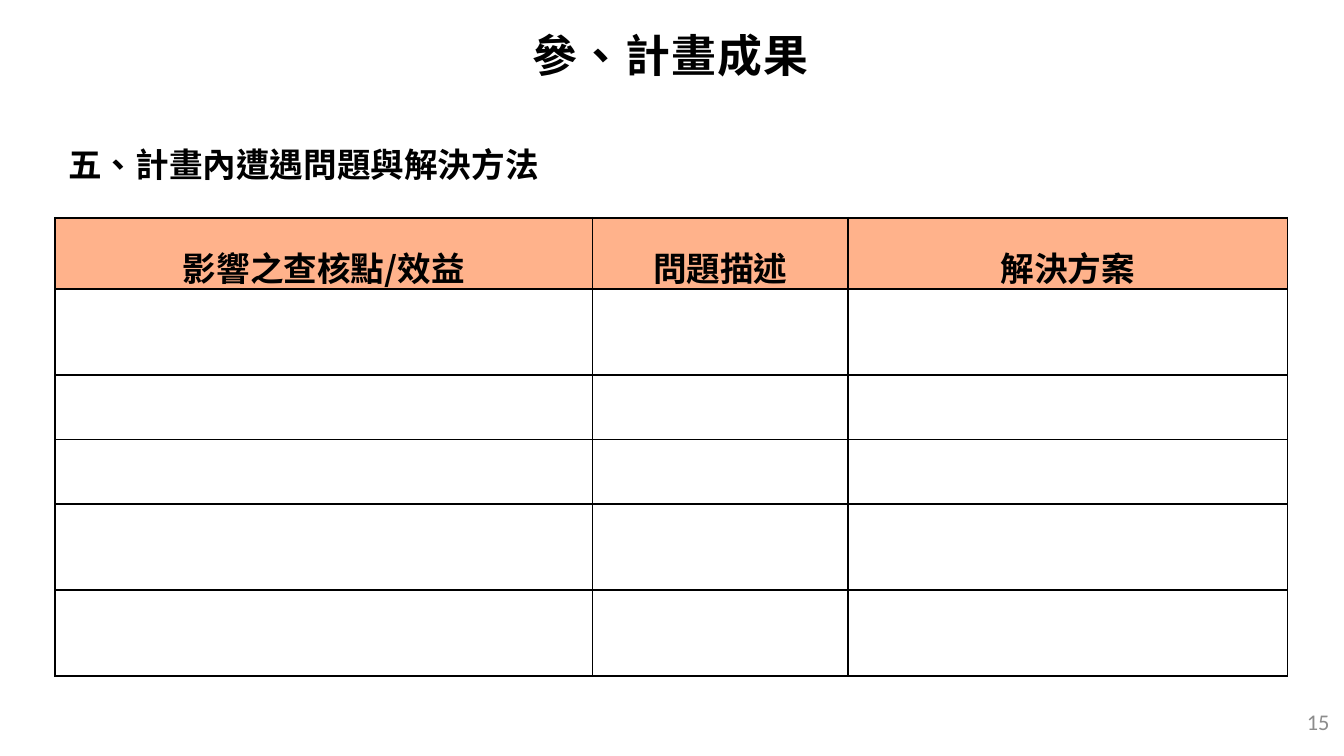
from dataclasses import dataclass
from typing import Any, NamedTuple

from lxml.etree import SubElement
from pptx import Presentation
from pptx.dml.color import RGBColor
from pptx.enum.text import MSO_ANCHOR, PP_ALIGN
from pptx.oxml.ns import qn
from pptx.util import Inches, Pt


@dataclass(frozen=True)
class Theme:
    ink: str = "000000"
    gray: str = "8C8C8C"
    head: str = "FFB28B"
    white: str = "FFFFFF"
    han: str = "Noto Sans CJK SC"
    latin: str = "Calibri"
    big: int = 24
    mid: int = 18
    small: int = 12
    rule: int = 1


class Box(NamedTuple):
    left: float
    top: float
    width: float
    height: float


THEME = Theme()
WIDE = 10
HIGH = WIDE * 9 / 16
LEFT, SPAN = 0.41, 9.17
TITLE = Box(-0.01, -0.02, WIDE, 0.85)
TOPIC = Box(LEFT, 1.02, SPAN, 0.4)
NUMBER = Box(7.74, 5.22, 2.25, 0.3)
HEADS = ("影響之查核點/效益", "問題描述", "解決方案")
COLS = (4, 1.9, 3.27)
ROWS = (0.53, 0.64, 0.48, 0.48, 0.64, 0.64)
GRID = Box(LEFT, 1.62, sum(COLS), sum(ROWS))


def place(shape: Any, box: Box) -> None:
    shape.left, shape.top, shape.width, shape.height = map(Inches, box)


def write(frame: Any, text: str, *, size: int = THEME.mid, font: str = THEME.han,
          color: str = THEME.ink, bold: bool = True,
          align: PP_ALIGN = PP_ALIGN.LEFT, lead: float = 1.0,
          track: int = 0) -> None:
    para = frame.paragraphs[0]
    para.alignment, para.line_spacing = align, lead
    run = para.add_run()
    run.text = text
    run.font.size, run.font.bold, run.font.name = Pt(size), bold, font
    run.font.color.rgb = RGBColor.from_string(color)
    props = run._r.get_or_add_rPr()
    props.set("lang", "zh-TW")
    if track:
        props.set("spc", str(track))
    SubElement(props, qn("a:ea"), typeface=font)


def label(slide: Any, box: Box, text: str, anchor: MSO_ANCHOR, **form: Any) -> None:
    shape = slide.shapes.add_textbox(*map(Inches, box))
    frame = shape.text_frame
    frame.word_wrap, frame.vertical_anchor = True, anchor
    write(frame, text, **form)


def border(cell: Any) -> None:
    props = cell._tc.get_or_add_tcPr()
    for side in ("lnL", "lnR", "lnT", "lnB"):
        line = SubElement(props, qn(f"a:{side}"), w=str(Pt(THEME.rule)))
        fill = SubElement(line, qn("a:solidFill"))
        SubElement(fill, qn("a:srgbClr"), val=THEME.ink)


def paint(cell: Any, color: str) -> None:
    cell.fill.solid()
    cell.fill.fore_color.rgb = RGBColor.from_string(color)


def draw_grid(slide: Any) -> None:
    table = slide.shapes.add_table(len(ROWS), len(COLS), *map(Inches, GRID)).table
    table.first_row = table.horz_banding = False
    for col, width in zip(table.columns, COLS):
        col.width = Inches(width)
    for row, height in zip(table.rows, ROWS):
        row.height = Inches(height)
    for cell in table.iter_cells():
        border(cell)
        cell.fill.background()
    for cell, text in zip(table.rows[0].cells, HEADS):
        paint(cell, THEME.head)
        cell.margin_left = cell.margin_right = Inches(0.02)
        cell.margin_top = cell.margin_bottom = 0
        cell.vertical_anchor = MSO_ANCHOR.MIDDLE
        write(cell.text_frame, text, align=PP_ALIGN.CENTER, lead=1.5)


def draw_title(slide: Any) -> None:
    title = slide.shapes.title
    place(title, TITLE)
    frame = title.text_frame
    frame.vertical_anchor = MSO_ANCHOR.MIDDLE
    frame.margin_left = frame.margin_right = Inches(0.07)
    frame.margin_top = frame.margin_bottom = Inches(0.04)
    write(frame, "參、計畫成果", size=THEME.big, align=PP_ALIGN.CENTER, track=80)


def main() -> None:
    deck = Presentation()
    deck.slide_width, deck.slide_height = Inches(WIDE), Inches(HIGH)
    slide = deck.slides.add_slide(deck.slide_layouts[5])
    slide.background.fill.solid()
    slide.background.fill.fore_color.rgb = RGBColor.from_string(THEME.white)
    draw_title(slide)
    label(slide, TOPIC, "五、計畫內遭遇問題與解決方法", MSO_ANCHOR.TOP)
    draw_grid(slide)
    label(slide, NUMBER, "15", MSO_ANCHOR.MIDDLE, size=THEME.small,
          font=THEME.latin, color=THEME.gray, bold=False, align=PP_ALIGN.RIGHT)
    deck.save("out.pptx")


if __name__ == "__main__":
    main()
